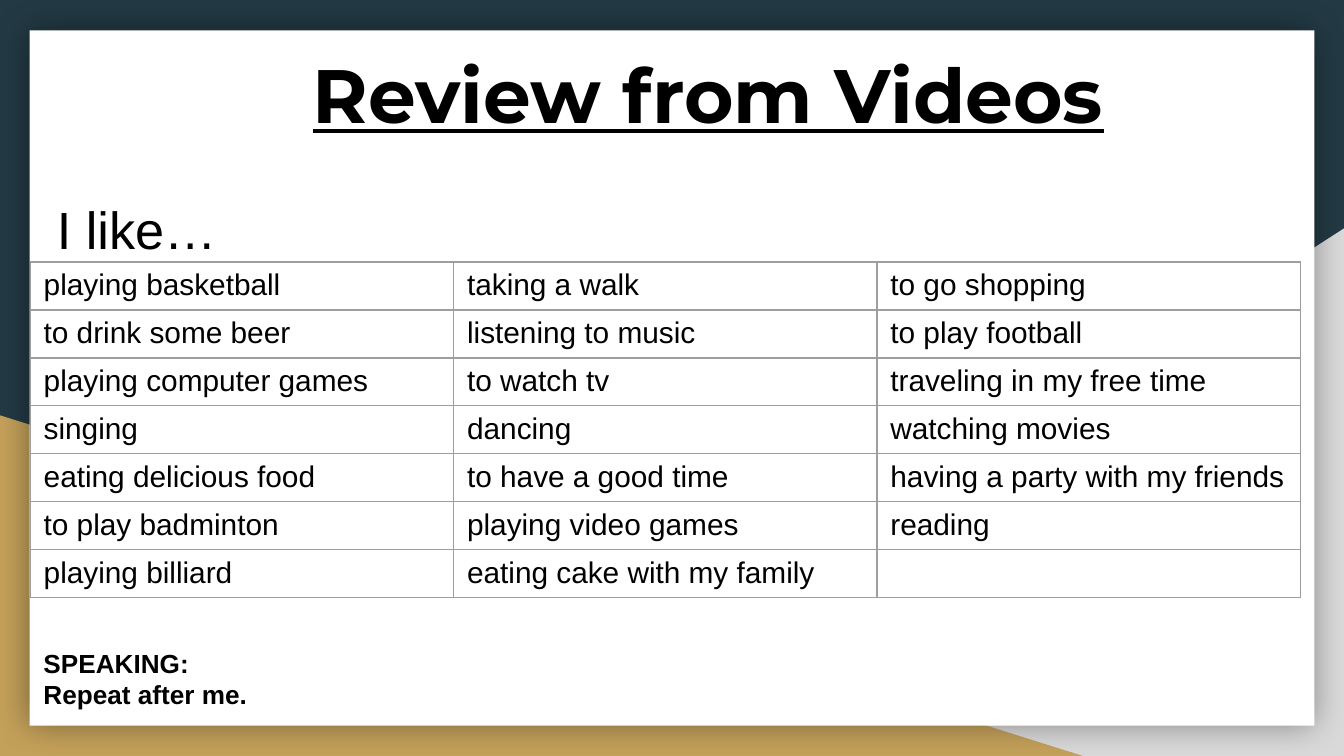
from dataclasses import dataclass
from typing import Any

from lxml import etree
from pptx import Presentation
from pptx import util as u
from pptx.dml.color import RGBColor
from pptx.enum import shapes, text
from pptx.oxml import ns

EMU_PER_PX = 4572

NAVY = RGBColor(0x23, 0x3A, 0x44)
GREY = RGBColor(0xD9, 0xD9, 0xD9)
GOLD = RGBColor(0xC4, 0xA1, 0x5A)
WHITE = RGBColor(0xFF, 0xFF, 0xFF)
BLACK = RGBColor(0x00, 0x00, 0x00)
BORDER = RGBColor(0x9E, 0x9E, 0x9E)

TITLE_FONT = {"name": "Montserrat", "size": u.Pt(40.5), "bold": True, "underline": True}
LEAD_FONT = {"name": "Arial", "size": u.Pt(28)}
CELL_FONT = {"name": "Arial", "size": u.Pt(16)}
TASK_FONT = {"name": "Arial", "size": u.Pt(14), "bold": True}


@dataclass(frozen=True)
class Box:
    left: int
    top: int
    width: int
    height: int

    def emu(self) -> list[u.Emu]:
        return [px(n) for n in (self.left, self.top, self.width, self.height)]


@dataclass(frozen=True)
class Panel:
    kind: shapes.MSO_SHAPE
    box: Box
    color: RGBColor
    flipped: bool = False
    shadowed: bool = False


@dataclass(frozen=True)
class Label:
    box: Box
    lines: tuple[str, ...]
    font: dict[str, Any]
    frame: dict[str, Any]
    align: text.PP_ALIGN = text.PP_ALIGN.LEFT


PANELS = (
    Panel(shapes.MSO_SHAPE.RIGHT_TRIANGLE, Box(784, 340, 1216, 785), GREY, flipped=True),
    Panel(shapes.MSO_SHAPE.RIGHT_TRIANGLE, Box(0, 618, 1612, 507), GOLD),
    Panel(shapes.MSO_SHAPE.RECTANGLE, Box(44, 45, 1912, 1035), WHITE, shadowed=True),
)

TITLE = Label(
    Box(279, 35, 1550, 208), ("Review from Videos",), TITLE_FONT,
    {"vertical_anchor": text.MSO_ANCHOR.MIDDLE,
     "margin_top": u.Inches(0.1), "margin_bottom": u.Inches(0.1)},
    text.PP_ALIGN.CENTER,
)
GROWING = {"auto_size": text.MSO_AUTO_SIZE.SHAPE_TO_FIT_TEXT}
LEAD = Label(Box(65, 284, 500, 114), ("I like…",), LEAD_FONT, GROWING)
TASK = Label(Box(45, 953, 1000, 114), ("SPEAKING:", "Repeat after me."), TASK_FONT, GROWING)

HOBBIES_AT = (45, 390)
COLUMN_WIDTH = 630
ROW_HEIGHT = 71
CELL_FORMAT = {"margin_top": u.Inches(0.05), "margin_bottom": u.Inches(0.04)}
HOBBIES = (
    ("playing basketball", "taking a walk", "to go shopping"),
    ("to drink some beer", "listening to music", "to play football"),
    ("playing computer games", "to watch tv", "traveling in my free time"),
    ("singing", "dancing", "watching movies"),
    ("eating delicious food", "to have a good time", "having a party with my friends"),
    ("to play badminton", "playing video games", "reading"),
    ("playing billiard", "eating cake with my family", ""),
)


def px(length: int) -> u.Emu:
    return u.Emu(length * EMU_PER_PX)


def apply(target: Any, values: dict[str, Any]) -> None:
    for name, value in values.items():
        setattr(target, name, value)


def add_color(parent: Any, color: RGBColor) -> Any:
    return etree.SubElement(parent, ns.qn("a:srgbClr"), val=str(color))


def write(paragraph: Any, line: str, font: dict[str, Any]) -> None:
    run = paragraph.add_run()
    run.text = line
    apply(run.font, font)
    run.font.color.rgb = BLACK


def draw_panel(slide: Any, panel: Panel) -> None:
    shape = slide.shapes.add_shape(panel.kind, *panel.box.emu())
    shape.shadow.inherit = False
    shape.fill.solid()
    shape.fill.fore_color.rgb = panel.color
    shape.line.fill.background()
    properties = shape._element.spPr
    if panel.flipped:
        properties.find(ns.qn("a:xfrm")).set("flipH", "1")
    if panel.shadowed:
        effects = properties.find(ns.qn("a:effectLst"))
        shadow = etree.SubElement(
            effects, ns.qn("a:outerShdw"), blurRad=str(u.Pt(18)), dist="0", dir="0",
            algn="ctr", rotWithShape="0")
        etree.SubElement(add_color(shadow, BLACK), ns.qn("a:alpha"), val="40000")


def draw_label(slide: Any, label: Label) -> None:
    frame = slide.shapes.add_textbox(*label.box.emu()).text_frame
    apply(frame, {"word_wrap": True, **label.frame})
    for index, line in enumerate(label.lines):
        paragraph = frame.add_paragraph() if index else frame.paragraphs[0]
        paragraph.alignment = label.align
        write(paragraph, line, label.font)


def draw_borders(cell: Any) -> None:
    properties = cell._tc.get_or_add_tcPr()
    for position, side in enumerate(("a:lnL", "a:lnR", "a:lnT", "a:lnB")):
        line = etree.Element(ns.qn(side), w=str(u.Pt(0.75)))
        add_color(etree.SubElement(line, ns.qn("a:solidFill")), BORDER)
        properties.insert(position, line)


def draw_table(slide: Any, rows: tuple[tuple[str, ...], ...]) -> None:
    box = Box(*HOBBIES_AT, COLUMN_WIDTH * len(rows[0]), ROW_HEIGHT * len(rows))
    table = slide.shapes.add_table(len(rows), len(rows[0]), *box.emu()).table
    apply(table, {"first_row": False, "horz_banding": False})
    for row_index, row in enumerate(rows):
        for column_index, hobby in enumerate(row):
            cell = table.cell(row_index, column_index)
            apply(cell, CELL_FORMAT)
            cell.fill.background()
            draw_borders(cell)
            paragraph = cell.text_frame.paragraphs[0]
            if hobby:
                write(paragraph, hobby, CELL_FONT)
            else:
                size = str(int(CELL_FONT["size"].pt * 100))
                etree.SubElement(paragraph._p, ns.qn("a:endParaRPr"), sz=size)


def main() -> None:
    presentation = Presentation()
    apply(presentation, {"slide_width": px(2000), "slide_height": px(1125)})
    slide = presentation.slides.add_slide(presentation.slide_layouts[6])
    slide.background.fill.solid()
    slide.background.fill.fore_color.rgb = NAVY
    for panel in PANELS:
        draw_panel(slide, panel)
    draw_label(slide, TITLE)
    draw_table(slide, HOBBIES)
    for label in (LEAD, TASK):
        draw_label(slide, label)
    presentation.save("out.pptx")


if __name__ == "__main__":
    main()
